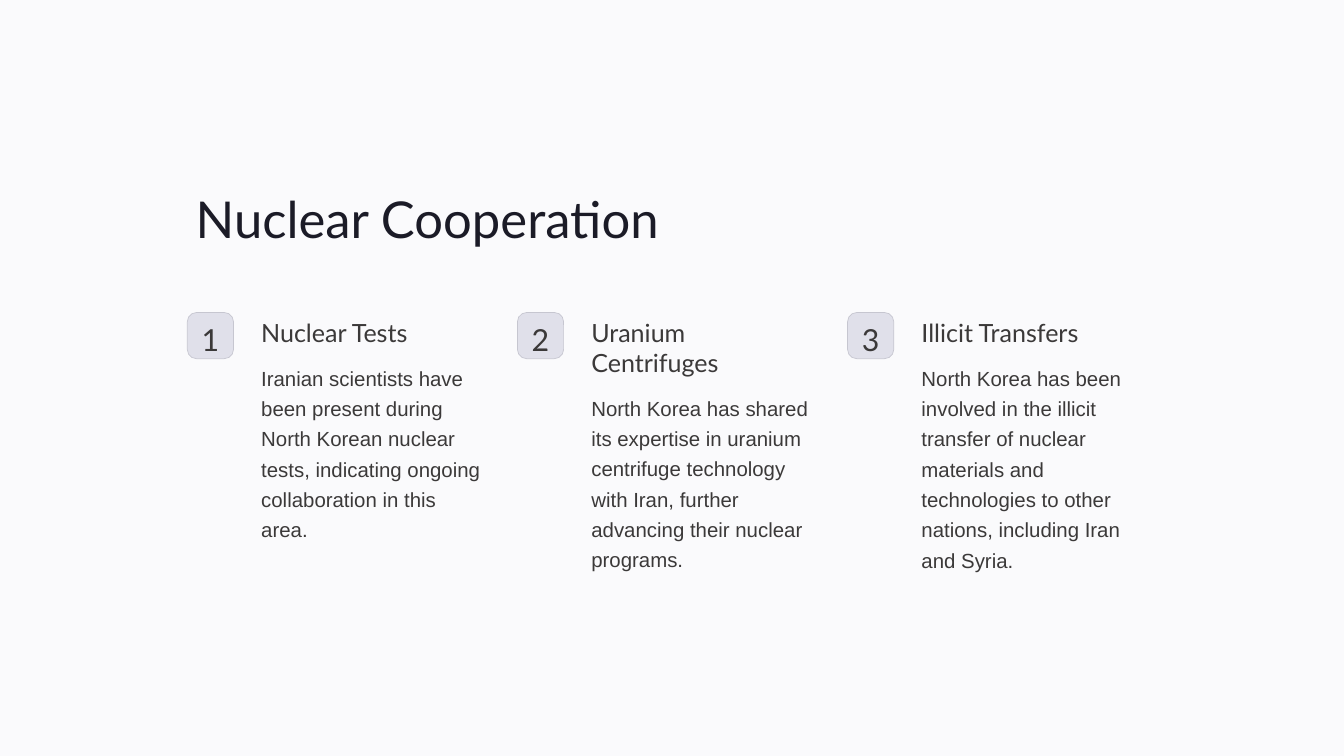
"""Build the slide on nuclear cooperation with three numbered points."""
from dataclasses import dataclass

from pptx import Presentation
from pptx.dml.color import RGBColor
from pptx.enum.shapes import MSO_SHAPE as Shape
from pptx.enum.text import MSO_ANCHOR as Anchor, MSO_AUTO_SIZE as Fit, PP_ALIGN as Align
from pptx.slide import Slide
from pptx.text.text import TextFrame, _Paragraph as Para
from pptx.util import Inches, Pt

PAPER = RGBColor(0xFA, 0xFA, 0xFC)
INK = RGBColor(0x1B, 0x1B, 0x27)
GREY = RGBColor(0x3B, 0x39, 0x39)
BADGE = RGBColor(0xE0, 0xE0, 0xEA)
EDGE = RGBColor(0xC6, 0xC6, 0xD0)

LEFT, PITCH = 2.23, 3.93
BADGE_TOP, SIDE = 3.72, 0.55
TEXT_TOP, TEXT_GAP = 3.78, 0.88


@dataclass
class Point:
    head: str
    body: str


POINTS = [
    Point("Nuclear Tests",
          "Iranian scientists have been present during North Korean nuclear "
          "tests, indicating ongoing collaboration in this area."),
    Point("Uranium Centrifuges",
          "North Korea has shared its expertise in uranium centrifuge "
          "technology with Iran, further advancing their nuclear programs."),
    Point("Illicit Transfers",
          "North Korea has been involved in the illicit transfer of nuclear "
          "materials and technologies to other nations, including Iran and Syria."),
]


def set_frame(frame: TextFrame, anchor: Anchor, top: float = 0) -> None:
    frame.margin_left = frame.margin_right = frame.margin_bottom = 0
    frame.margin_top = Inches(top)
    frame.word_wrap = True
    frame.auto_size = Fit.NONE
    frame.vertical_anchor = anchor


def add_text(para: Para, text: str, font: str, size: float, color: RGBColor,
             align: Align = Align.LEFT) -> None:
    para.alignment = align
    run = para.add_run()
    run.text = text
    run.font.name = font
    run.font.size = Pt(size)
    run.font.color.rgb = color


def add_title(slide: Slide, text: str) -> None:
    title = slide.shapes.title
    title.left, title.top = Inches(2.33), Inches(2.24)
    title.width, title.height = Inches(11.36), Inches(1)
    set_frame(title.text_frame, Anchor.TOP)
    add_text(title.text_frame.paragraphs[0], text, "Lato", 43.5, INK)


def add_badge(slide: Slide, left: float, num: int) -> None:
    badge = slide.shapes.add_shape(
        Shape.ROUNDED_RECTANGLE, Inches(left), Inches(BADGE_TOP), Inches(SIDE), Inches(SIDE))
    badge.adjustments[0] = 0.2
    badge.shadow.inherit = False
    badge.fill.solid()
    badge.fill.fore_color.rgb = BADGE
    badge.line.color.rgb = EDGE
    badge.line.width = Pt(0.6)
    set_frame(badge.text_frame, Anchor.MIDDLE, 0.08)
    add_text(badge.text_frame.paragraphs[0], str(num), "Lato", 26, GREY, Align.CENTER)


def add_point(slide: Slide, left: float, point: Point) -> None:
    box = slide.shapes.add_textbox(
        Inches(left), Inches(TEXT_TOP), Inches(2.64), Inches(3))
    frame = box.text_frame
    set_frame(frame, Anchor.TOP)
    add_text(frame.paragraphs[0], point.head, "Lato", 21.5, GREY)
    body = frame.add_paragraph()
    body.space_before = Pt(10.5)
    body.line_spacing = 1.24
    add_text(body, point.body, "Arial", 17.5, GREY)


def main() -> None:
    deck = Presentation()
    deck.slide_width, deck.slide_height = Inches(16), Inches(9)
    slide = deck.slides.add_slide(deck.slide_layouts[5])
    slide.background.fill.solid()
    slide.background.fill.fore_color.rgb = PAPER
    add_title(slide, "Nuclear Cooperation")
    for i, point in enumerate(POINTS):
        left = LEFT + i * PITCH
        add_badge(slide, left, i + 1)
        add_point(slide, left + TEXT_GAP, point)
    deck.save("out.pptx")


if __name__ == "__main__":
    main()
